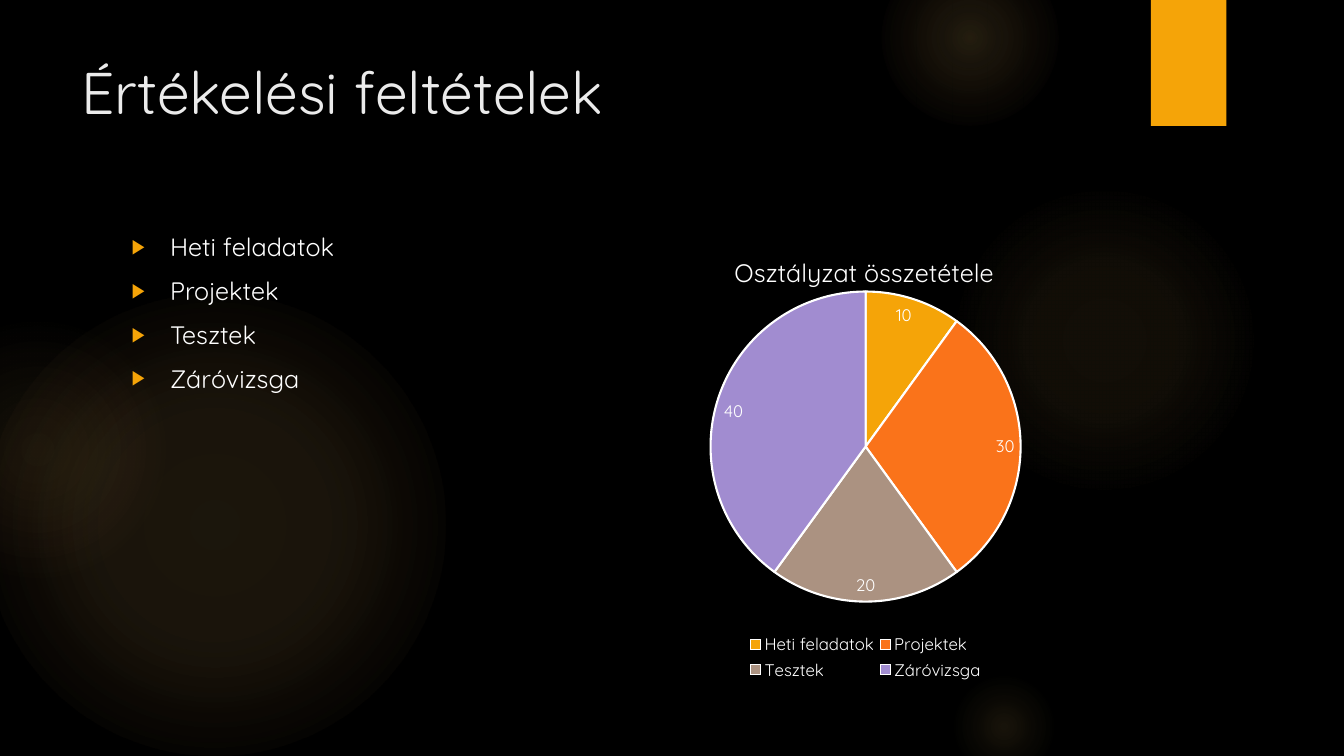
from dataclasses import dataclass

import pptx
import pptx.chart.data
import pptx.dml.color
import pptx.enum.chart
import pptx.enum.shapes
import pptx.enum.text
import pptx.oxml
import pptx.oxml.ns
import pptx.util

# Grid: 160 columns by 90 rows of square cells, 12 to the inch
COLUMNS, ROWS = 160, 90
CELL = pptx.util.Inches(1) // 12
FONT = "Quicksand"
COLORS = {
    "background": "000000",
    "title": "EBEBEB",
    "text": "FFFFFF",
    "accent": "F5A408",
    "glow": "FAC96A",
    "glow_edge": "F59B74",
}


@dataclass(frozen=True)
class Box:
    column: float
    row: float
    columns: float
    rows: float

    def emu(self) -> tuple[int, ...]:
        return tuple(round(n * CELL) for n in (self.column, self.row, self.columns, self.rows))


@dataclass(frozen=True)
class Glow:
    column: float
    row: float
    diameter: float
    core: int  # opacity in percent at the centre
    halo: int  # opacity in percent at halo_at
    halo_at: int
    edge_at: int
    edge: str = "glow"


@dataclass(frozen=True)
class Component:
    name: str
    weight: int
    color: str


GLOWS = [
    Glow(-2, 35, 55, 11, 10, 36, 75),
    Glow(-11, 38, 31, 8, 5, 36, 71, "glow_edge"),
    Glow(113, 22, 37, 7, 6, 36, 69),
    Glow(105, -6, 21, 14, 7, 36, 73),
    Glow(113, 80, 13, 10, 5, 31, 66),
]
COMPONENTS = [
    Component("Heti feladatok", 10, "F5A408"),
    Component("Projektek", 30, "FA731A"),
    Component("Tesztek", 20, "AB9281"),
    Component("Záróvizsga", 40, "A18CD0"),
]
RIBBON = Box(137, 0, 9, 15)
TITLE = Box(8.5, 6, 123.5, 18.4)
LIST = Box(14.5, 27, 57.7, 55.1)
PIE = Box(74.2, 27, 57.7, 55.1)


def rgb(value: str) -> pptx.dml.color.RGBColor:
    return pptx.dml.color.RGBColor.from_string(value)


def style_font(font, size: float, color: str) -> None:
    font.name = FONT
    font.size = pptx.util.Pt(size)
    font.bold = False
    font.color.rgb = rgb(color)


def xml(text: str, prefix: str):
    """Parse one element, declaring its namespace prefix."""
    head, mark, tail = text.partition(">")
    return pptx.oxml.parse_xml(f"{head} {pptx.oxml.ns.nsdecls(prefix)}{mark}{tail}")


def add_plain_shape(slide, kind, box: Box):
    shape = slide.shapes.add_shape(kind, *box.emu())
    shape.shadow.inherit = False
    shape.line.fill.background()
    return shape


def add_glow(slide, glow: Glow) -> None:
    box = Box(glow.column, glow.row, glow.diameter, glow.diameter)
    circle = add_plain_shape(slide, pptx.enum.shapes.MSO_SHAPE.OVAL, box)
    circle.fill.gradient()
    gradient = circle.element.spPr.find(pptx.oxml.ns.qn("a:gradFill"))
    stops = [(0, "glow", glow.core), (glow.halo_at, "glow", glow.halo), (glow.edge_at, glow.edge, 0)]
    stop_xml = "".join(
        f'<a:gs pos="{at * 1000}"><a:srgbClr val="{COLORS[color]}">'
        f'<a:alpha val="{opacity * 1000}"/></a:srgbClr></a:gs>'
        for at, color, opacity in stops
    )
    radial = xml(
        f'<a:gradFill rotWithShape="1"><a:gsLst>{stop_xml}</a:gsLst><a:path path="circle">'
        '<a:fillToRect l="50000" t="50000" r="50000" b="50000"/></a:path></a:gradFill>', "a")
    gradient.getparent().replace(gradient, radial)


def add_title(slide, text: str) -> None:
    title = slide.shapes.title
    title.left, title.top, title.width, title.height = TITLE.emu()
    frame = title.text_frame
    frame.text = text
    frame.auto_size = pptx.enum.text.MSO_AUTO_SIZE.NONE
    frame.vertical_anchor = pptx.enum.text.MSO_ANCHOR.TOP
    frame.paragraphs[0].alignment = pptx.enum.text.PP_ALIGN.LEFT
    style_font(frame.paragraphs[0].font, 42, COLORS["title"])
    # Bring the title in front of the decoration
    title.element.getparent().append(title.element)


def add_component_list(slide) -> None:
    frame = slide.shapes.add_textbox(*LIST.emu()).text_frame
    frame.word_wrap = True
    frame.text = "\n".join(component.name for component in COMPONENTS)
    indent = pptx.util.Inches(0.38)
    for paragraph in frame.paragraphs:
        style_font(paragraph.font, 18, COLORS["text"])
        properties = paragraph._p.get_or_add_pPr()
        properties.set("marL", str(indent))
        properties.set("indent", str(-indent))
        bullet = [
            '<a:spcBef><a:spcPct val="20000"/></a:spcBef>',
            '<a:spcAft><a:spcPts val="600"/></a:spcAft>',
            f'<a:buClr><a:srgbClr val="{COLORS["accent"]}"/></a:buClr>',
            '<a:buSzPct val="80000"></a:buSzPct>',
            '<a:buFont typeface="Arial"></a:buFont>',
            '<a:buChar char="▶"></a:buChar>',
        ]
        for position, part in enumerate(bullet):
            properties.insert(position, xml(part, "a"))


def place_chart_part(part, after: str = "", **shares: float) -> None:
    """Place a title, legend or plot by shares of the chart's size."""
    qn = pptx.oxml.ns.qn
    for layout in part.findall(qn("c:layout")):
        part.remove(layout)
    values = {"xMode": "edge", "yMode": "edge", **shares}
    inner = "" if after else '<c:layoutTarget val="inner"/>'
    body = "".join(f'<c:{key} val="{value}"/>' for key, value in values.items())
    layout = xml(f"<c:layout><c:manualLayout>{inner}{body}</c:manualLayout></c:layout>", "c")
    if after:
        part.find(qn(after)).addnext(layout)
    else:
        part.insert(0, layout)


def add_pie(slide) -> None:
    data = pptx.chart.data.CategoryChartData()
    data.categories = [component.name for component in COMPONENTS]
    data.add_series("Series 1", [component.weight for component in COMPONENTS])
    kind = pptx.enum.chart.XL_CHART_TYPE.PIE
    chart = slide.shapes.add_chart(kind, *PIE.emu(), data).chart
    style_font(chart.font, 10, COLORS["text"])

    heading = chart.chart_title
    heading.text_frame.text = "Osztályzat összetétele"
    style_font(heading.text_frame.paragraphs[0].font, 18, COLORS["text"])
    place_chart_part(heading._element, "c:tx", x=0.22, y=0.05)

    chart.has_legend = True
    chart.legend.position = pptx.enum.chart.XL_LEGEND_POSITION.BOTTOM
    chart.legend.include_in_layout = False
    style_font(chart.legend.font, 12, COLORS["text"])
    place_chart_part(chart.legend._element, "c:legendPos", x=0.25, y=0.87, w=0.5, h=0.12)

    plot = chart.plots[0]
    plot.vary_by_categories = True
    place_chart_part(plot._element.getparent(), x=0.18, y=0.14, w=0.64, h=0.67)
    for index, component in enumerate(COMPONENTS):
        slice_format = plot.series[0].points[index].format
        slice_format.fill.solid()
        slice_format.fill.fore_color.rgb = rgb(component.color)
        slice_format.line.color.rgb = rgb(COLORS["text"])
        slice_format.line.width = pptx.util.Pt(1.5)
    labels = plot.series[0].data_labels
    labels.show_value = True
    labels.position = pptx.enum.chart.XL_LABEL_POSITION.INSIDE_END
    style_font(labels.font, 12, COLORS["text"])


def main() -> None:
    deck = pptx.Presentation()
    deck.slide_width, deck.slide_height = COLUMNS * CELL, ROWS * CELL
    slide = deck.slides.add_slide(deck.slide_layouts.get_by_name("Title Only"))

    # Background and decoration
    slide.background.fill.solid()
    slide.background.fill.fore_color.rgb = rgb(COLORS["background"])
    for glow in GLOWS:
        add_glow(slide, glow)
    ribbon = add_plain_shape(slide, pptx.enum.shapes.MSO_SHAPE.RECTANGLE, RIBBON)
    ribbon.fill.solid()
    ribbon.fill.fore_color.rgb = rgb(COLORS["accent"])

    # Content
    add_title(slide, "Értékelési feltételek")
    add_component_list(slide)
    add_pie(slide)
    deck.save("out.pptx")


if __name__ == "__main__":
    main()
